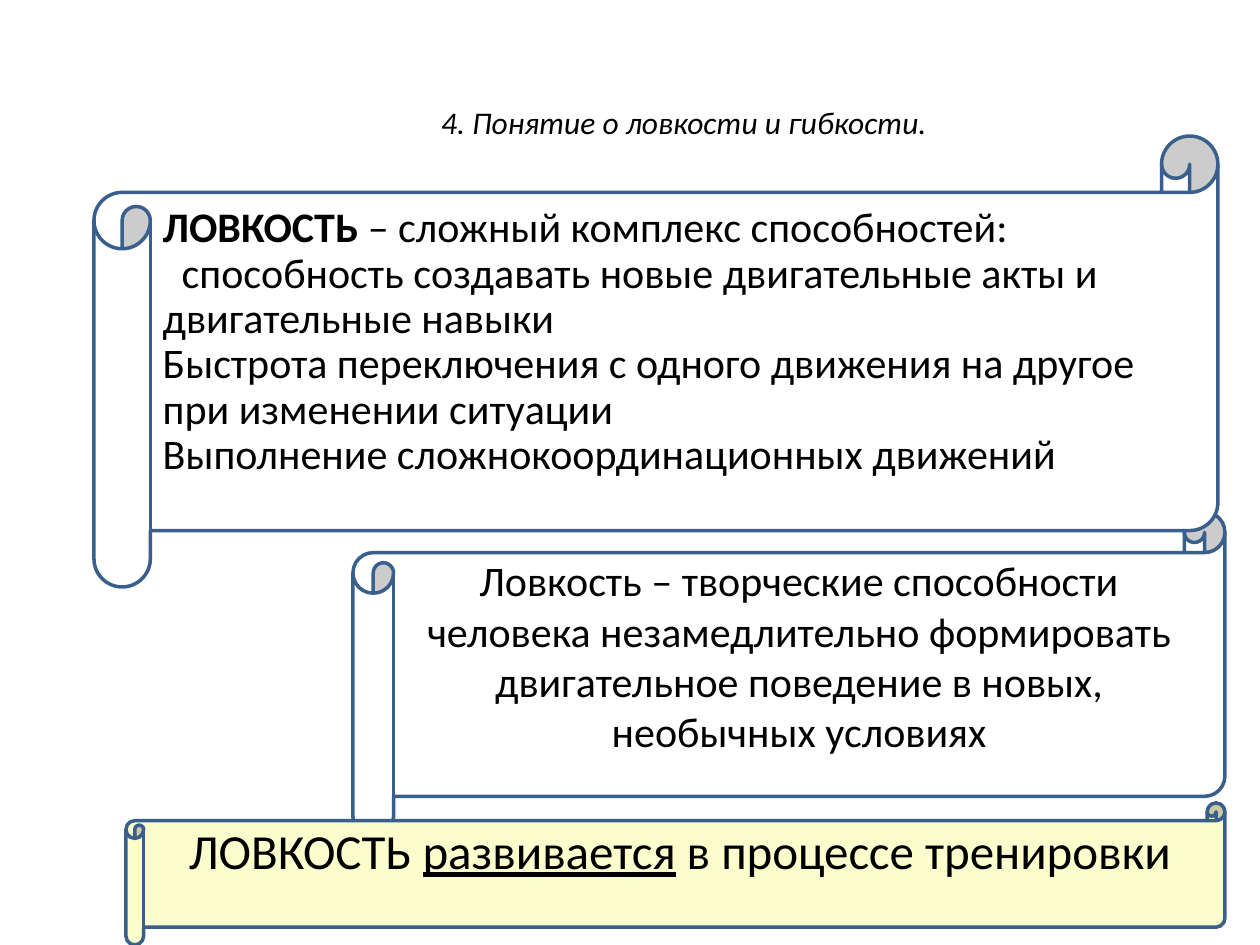
import pptx
import pptx.util
import pptx.dml.color
import pptx.enum.shapes
import pptx.enum.text

PX = 914400 // 126
BLACK = pptx.dml.color.RGBColor(0x00, 0x00, 0x00)
WHITE = pptx.dml.color.RGBColor(0xFF, 0xFF, 0xFF)
CREAM = pptx.dml.color.RGBColor(0xFC, 0xFD, 0xCD)
BLUE = pptx.dml.color.RGBColor(0x3A, 0x5F, 0x8C)
LEFT = pptx.enum.text.PP_ALIGN.LEFT
CENTER = pptx.enum.text.PP_ALIGN.CENTER
TOP = pptx.enum.text.MSO_ANCHOR.TOP
MIDDLE = pptx.enum.text.MSO_ANCHOR.MIDDLE


def write(paragraph, text, size=24, bold=False, italic=False, underline=False,
          align=CENTER, spacing=None, indent=0):
    """Append a formatted run to the paragraph."""
    paragraph.alignment = align
    if spacing:
        paragraph.line_spacing = spacing
    if indent:
        paragraph._p.get_or_add_pPr().set("indent", str(indent * PX))
    run = paragraph.add_run()
    run.text = text
    font = run.font
    font.name, font.size = "Calibri", pptx.util.Pt(size)
    font.bold, font.italic, font.underline = bold, italic, underline
    font.color.rgb = BLACK


def add_scroll(shapes, box, fill, anchor=MIDDLE, top=6, bottom=44):
    """Draw a scroll and return its text frame."""
    scroll = shapes.add_shape(pptx.enum.shapes.MSO_SHAPE.HORIZONTAL_SCROLL,
                              *(length * PX for length in box))
    scroll.shadow.inherit = False
    scroll.fill.solid()
    scroll.fill.fore_color.rgb = fill
    scroll.line.color.rgb = BLUE
    scroll.line.width = pptx.util.Pt(2)
    frame = scroll.text_frame
    frame.word_wrap = True
    frame.vertical_anchor = anchor
    frame.margin_top, frame.margin_bottom = top * PX, bottom * PX
    return frame


deck = pptx.Presentation()
deck.slide_width, deck.slide_height = 1260 * PX, 945 * PX
slide = deck.slides.add_slide(deck.slide_layouts[5])

# Title
title = slide.shapes.title
title.left, title.top, title.width, title.height = (
    length * PX for length in (147, 21, 1074, 202))
title.text_frame.vertical_anchor = MIDDLE
write(title.text_frame.paragraphs[0], "4. Понятие о ловкости и гибкости.",
      size=18, italic=True)

# Creative abilities, partly behind the definition
creativity = add_scroll(slide.shapes, (353, 512, 872, 325), WHITE)
write(creativity.paragraphs[0],
      "Ловкость – творческие способности человека незамедлительно "
      "формировать двигательное поведение в новых, необычных условиях")

# Definition and its components
definition = add_scroll(slide.shapes, (94, 136, 1124, 451), WHITE)
heading = definition.paragraphs[0]
write(heading, "ЛОВКОСТЬ", bold=True, align=LEFT, spacing=0.9)
write(heading, " – сложный комплекс способностей:", align=LEFT, spacing=0.9)
components = [
    ("способность создавать новые двигательные акты и двигательные навыки", 19),
    ("Быстрота переключения с одного движения на другое при изменении ситуации", 0),
    ("Выполнение сложнокоординационных движений", 0),
]
for component, indent in components:
    write(definition.add_paragraph(), component, align=LEFT, spacing=0.9,
          indent=indent)

# Conclusion
conclusion = add_scroll(slide.shapes, (126, 803, 1099, 142), CREAM,
                        anchor=TOP, top=0, bottom=0)
for words, underline in [("ЛОВКОСТЬ ", False), ("развивается", True),
                         (" в процессе тренировки", False)]:
    write(conclusion.paragraphs[0], words, size=28, underline=underline)

deck.save("out.pptx")
